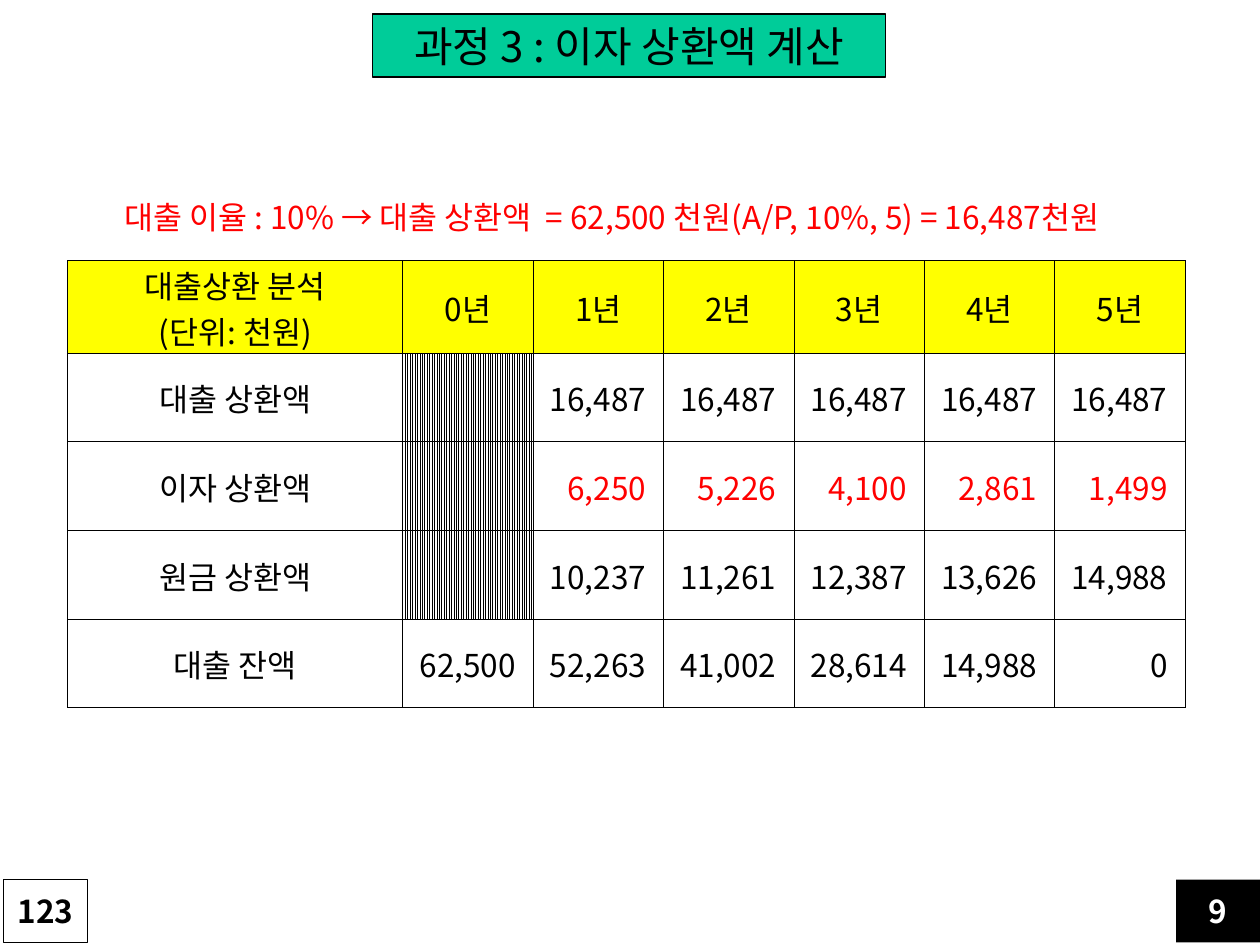
from lxml import etree
from pptx import Presentation
from pptx.dml.color import RGBColor
from pptx.enum.dml import MSO_PATTERN
from pptx.enum.shapes import MSO_SHAPE
from pptx.enum.text import MSO_ANCHOR, MSO_AUTO_SIZE, PP_ALIGN
from pptx.oxml import parse_xml
from pptx.oxml.ns import qn
from pptx.util import Pt

BLACK = RGBColor(0x00, 0x00, 0x00)
WHITE = RGBColor(0xFF, 0xFF, 0xFF)
RED = RGBColor(0xFF, 0x00, 0x00)
YELLOW = RGBColor(0xFF, 0xFF, 0x00)
GREEN = RGBColor(0x00, 0xCC, 0x99)
CENTER, RIGHT = PP_ALIGN.CENTER, PP_ALIGN.RIGHT
MIDDLE, TOP = MSO_ANCHOR.MIDDLE, MSO_ANCHOR.TOP
NO_AUTOFIT = MSO_AUTO_SIZE.NONE
STRIPES = MSO_PATTERN.LIGHT_VERTICAL
RECTANGLE = MSO_SHAPE.RECTANGLE
FONT = "Noto Sans CJK KR"
DRAWING_NS = "http://schemas.openxmlformats.org/drawingml/2006/main"
TITLE_ONLY = 5

YEARS = ["0년", "1년", "2년", "3년", "4년", "5년"]
LOAN_ROWS = [
    ["대출상환 분석\n(단위: 천원)", *YEARS],
    ["대출 상환액", None, "16,487", "16,487", "16,487", "16,487", "16,487"],
    ["이자 상환액", None, "6,250", "5,226", "4,100", "2,861", "1,499"],
    ["원금 상환액", None, "10,237", "11,261", "12,387", "13,626", "14,988"],
    ["대출 잔액", "62,500", "52,263", "41,002", "28,614", "14,988", "0"],
]
INTEREST_ROW = 2


def write(frame, text, color, size=18, align=CENTER, bold=False):
    """Fill a text frame and format each of its paragraphs."""
    frame.text = text
    for paragraph in frame.paragraphs:
        paragraph.alignment = align
        font = paragraph.font
        font.name, font.size, font.bold = FONT, Pt(size), bold
        font.color.rgb = color
        properties = paragraph._p.pPr.find(qn("a:defRPr"))
        etree.SubElement(properties, qn("a:ea")).set("typeface", FONT)


def outline(shape, fill, line=None):
    """Give a shape a solid fill and an optional thin line."""
    shape.fill.solid()
    shape.fill.fore_color.rgb = fill
    if line is None:
        shape.line.fill.background()
    else:
        shape.line.color.rgb = line
        shape.line.width = Pt(0.75)


def add_heading(slide, left, top, width, height):
    """Place the slide title in its green box."""
    title = slide.shapes.title
    title.left, title.top, title.width, title.height = map(Pt, (left, top, width, height))
    outline(title, GREEN, BLACK)
    frame = title.text_frame
    frame.auto_size, frame.word_wrap = NO_AUTOFIT, False
    frame.vertical_anchor = TOP
    write(frame, "과정 3 : 이자 상환액 계산", BLACK, size=24)


def add_formula(slide, left, top, width, height):
    """Place the loan repayment formula above the table."""
    formula = slide.shapes.add_textbox(*map(Pt, (left, top, width, height)))
    formula.text_frame.word_wrap = False
    write(formula.text_frame,
          "대출 이율 : 10% → 대출 상환액  = 62,500 천원(A/P, 10%, 5) = 16,487천원", RED)
    formula.text_frame.paragraphs[0].line_spacing = 0.9


def add_borders(cell):
    """Draw a thin black line on all four sides of a cell."""
    properties = cell._tc.get_or_add_tcPr()
    for index, side in enumerate(("lnL", "lnR", "lnT", "lnB")):
        properties.insert(index, parse_xml(
            f'<a:{side} xmlns:a="{DRAWING_NS}" w="{Pt(0.5)}"><a:solidFill>'
            f'<a:srgbClr val="{BLACK}"/></a:solidFill></a:{side}>'))


def fill_cell(cell, text, row, column):
    """Format one cell of the loan table by its row and column."""
    is_label = row == 0 or column == 0
    cell.vertical_anchor = MIDDLE
    cell.margin_left = cell.margin_top = Pt(0.7)
    cell.margin_right = Pt(0.7 if is_label else 10)
    cell.margin_bottom = Pt(0)
    if text is None:
        cell.fill.patterned()
        cell.fill.pattern = STRIPES
        cell.fill.fore_color.rgb = BLACK
        cell.fill.back_color.rgb = WHITE
    else:
        if row == 0:
            cell.fill.solid()
            cell.fill.fore_color.rgb = YELLOW
        else:
            cell.fill.background()
        color = RED if row == INTEREST_ROW and column > 0 else BLACK
        write(cell.text_frame, text, color, align=CENTER if is_label else RIGHT)
    add_borders(cell)


def add_loan_table(slide, left, top, width, height):
    """Place the loan repayment table with a wide label column."""
    row_count, column_count = len(LOAN_ROWS), len(LOAN_ROWS[0])
    table = slide.shapes.add_table(
        row_count, column_count, *map(Pt, (left, top, width, height))).table
    table.first_row = table.horz_banding = False
    label_width = width * 0.3
    year_width = (width - label_width) / len(YEARS)
    for column, table_column in enumerate(table.columns):
        table_column.width = Pt(year_width if column else label_width)
    for row, values in enumerate(LOAN_ROWS):
        table.rows[row].height = Pt(height / row_count)
        for column, text in enumerate(values):
            fill_cell(table.cell(row, column), text, row, column)


def add_page_box(slide, left, top, width, height, number, fill, color, line=None):
    """Place a page number box at the foot of the slide."""
    page_box = slide.shapes.add_shape(RECTANGLE, *map(Pt, (left, top, width, height)))
    page_box.shadow.inherit = False
    outline(page_box, fill, line)
    page_box.text_frame.vertical_anchor = MIDDLE
    write(page_box.text_frame, number, color, bold=True)


def main():
    """Build and save the slide."""
    presentation = Presentation()
    presentation.slide_width, presentation.slide_height = Pt(720), Pt(540)
    slide = presentation.slides.add_slide(presentation.slide_layouts[TITLE_ONLY])
    add_loan_table(slide, 38.6, 149, 638.6, 253.4)
    add_formula(slide, 39.6, 112.3, 620, 26.6)
    add_heading(slide, 213, 8, 293, 36)
    add_page_box(slide, 672, 502.6, 48, 36, "9", BLACK, WHITE)
    add_page_box(slide, 2, 502.6, 48, 36, "123", WHITE, BLACK, BLACK)
    presentation.save("out.pptx")


if __name__ == "__main__":
    main()
